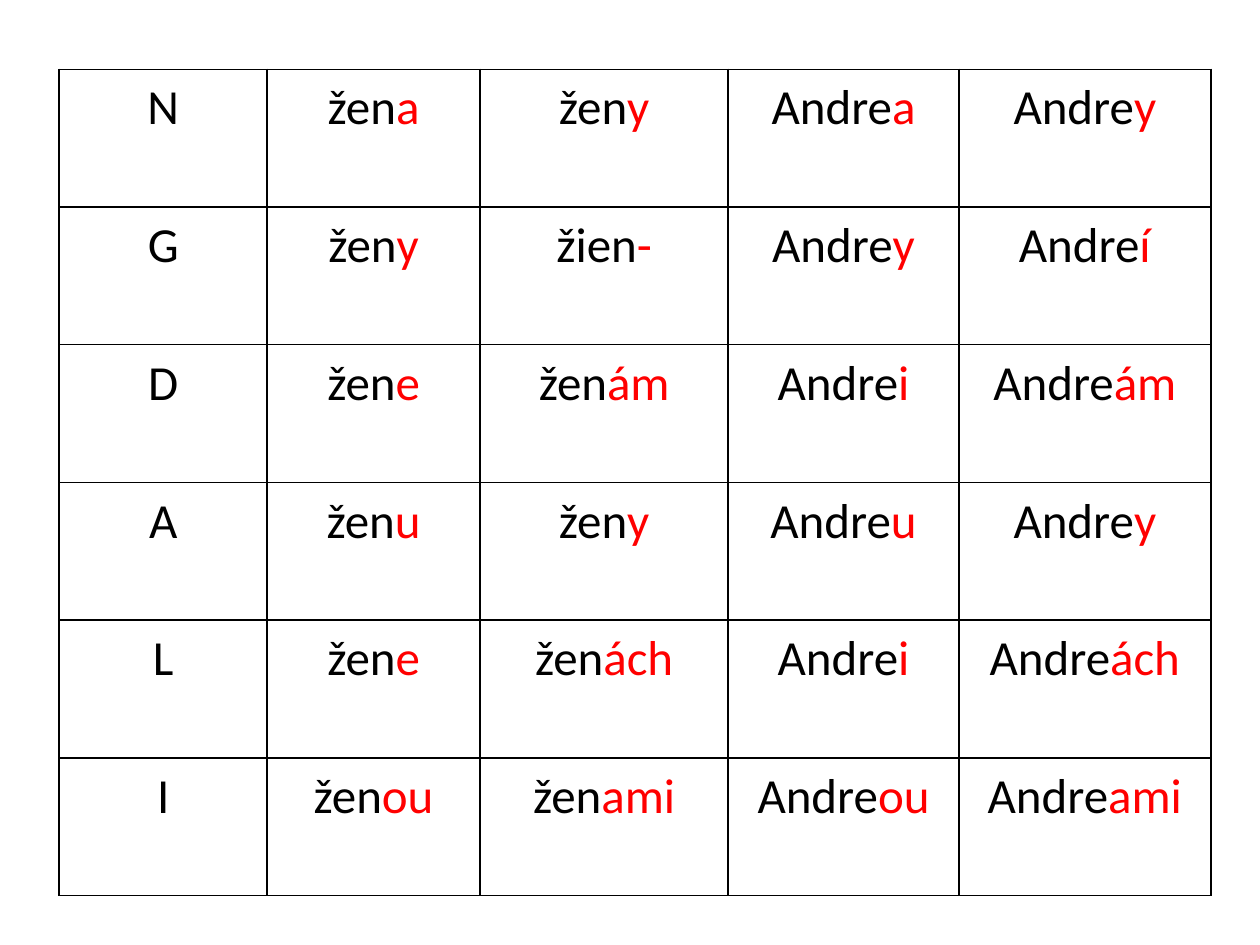
"""Build a slide with a table of Slovak feminine noun declension."""
from lxml.etree import SubElement
from pptx import Presentation
from pptx.dml.color import RGBColor
from pptx.enum.text import PP_ALIGN
from pptx.oxml.ns import qn
from pptx.util import Inches, Pt

COLORS = {"stem": "000000", "ending": "FF0000", "border": "000000", "cell": "FFFFFF"}
FONT, FONT_SIZE, LINE_SPACING = "Calibri", 28, 1.15
SLIDE_WIDTH, SLIDE_HEIGHT = 10, 7.5
LEFT, TOP, ROW_HEIGHT, SIDE_MARGIN = 0.47, 0.55, 1.093, 0.07
COLUMN_WIDTHS = [1.65, 1.69, 1.97, 1.83, 2]

DECLENSION = [
    ("N", ("žen", "a"), ("žen", "y"), ("Andre", "a"), ("Andre", "y")),
    ("G", ("žen", "y"), ("žien", "-"), ("Andre", "y"), ("Andre", "í")),
    ("D", ("žen", "e"), ("žen", "ám"), ("Andre", "i"), ("Andre", "ám")),
    ("A", ("žen", "u"), ("žen", "y"), ("Andre", "u"), ("Andre", "y")),
    ("L", ("žen", "e"), ("žen", "ách"), ("Andre", "i"), ("Andre", "ách")),
    ("I", ("žen", "ou"), ("žen", "ami"), ("Andre", "ou"), ("Andre", "ami")),
]


def add_borders(cell):
    properties = cell._tc.get_or_add_tcPr()
    for side in ("lnL", "lnR", "lnT", "lnB"):
        border = SubElement(properties, qn(f"a:{side}"), w=str(Pt(1)))
        fill = SubElement(border, qn("a:solidFill"))
        SubElement(fill, qn("a:srgbClr"), val=COLORS["border"])


def fill_cell(cell, word_parts):
    add_borders(cell)
    cell.fill.solid()
    cell.fill.fore_color.rgb = RGBColor.from_string(COLORS["cell"])
    cell.margin_left = cell.margin_right = Inches(SIDE_MARGIN)
    cell.margin_top = cell.margin_bottom = 0
    word = cell.text_frame.paragraphs[0]
    word.alignment = PP_ALIGN.CENTER
    word.line_spacing = LINE_SPACING
    for part, role in zip(word_parts, ("stem", "ending")):
        run = word.add_run()
        run.text = part
        run.font.name = FONT
        run.font.size = Pt(FONT_SIZE)
        run.font.bold = False
        run.font.color.rgb = RGBColor.from_string(COLORS[role])


def main():
    presentation = Presentation()
    presentation.slide_width = Inches(SLIDE_WIDTH)
    presentation.slide_height = Inches(SLIDE_HEIGHT)
    slide = presentation.slides.add_slide(presentation.slide_layouts[6])
    declension_table = slide.shapes.add_table(
        len(DECLENSION), len(COLUMN_WIDTHS), Inches(LEFT), Inches(TOP),
        Inches(sum(COLUMN_WIDTHS)), Inches(ROW_HEIGHT * len(DECLENSION)),
    ).table
    declension_table.first_row = declension_table.horz_banding = False
    for column, width in zip(declension_table.columns, COLUMN_WIDTHS):
        column.width = Inches(width)
    for row, forms in zip(declension_table.rows, DECLENSION):
        row.height = Inches(ROW_HEIGHT)
        for cell, word_parts in zip(row.cells, forms):
            fill_cell(cell, word_parts)
    presentation.save("out.pptx")


if __name__ == "__main__":
    main()
